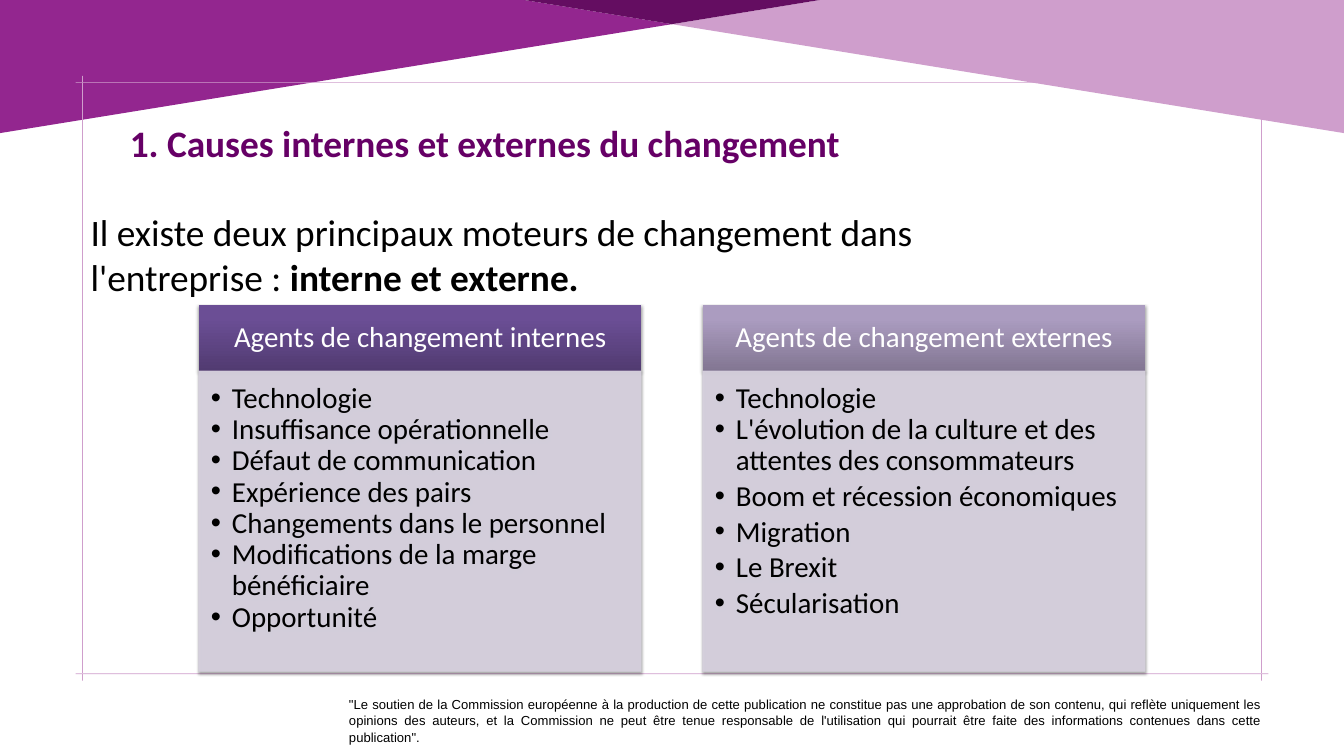
from lxml import etree
from pptx import Presentation
from pptx import util as u
from pptx.dml.color import RGBColor
from pptx.enum import shapes, text
from pptx.oxml import ns

Pt = u.Pt
ALIGN = text.PP_ALIGN
WIDTH, HEIGHT = 1440, 810


def colour(hex_code):
    return RGBColor.from_string(hex_code)


def set_all(target, values):
    for name, value in values.items():
        setattr(target, name, value)


def child(parent, tag, **attributes):
    return etree.SubElement(parent, ns.qn(tag), attributes)


def font_format(size, hex_code="000000", name="Calibri", bold=False):
    return {"size": Pt(size), "name": name, "bold": bold}, hex_code


def add_run(paragraph, wording, style):
    run = paragraph.add_run()
    run.text = wording
    values, hex_code = style
    set_all(run.font, values)
    run.font.color.rgb = colour(hex_code)


def set_frame(frame, insets=(7.2, 3.6, 7.2, 3.6), anchor=text.MSO_ANCHOR.TOP):
    sides = ("margin_left", "margin_top", "margin_right", "margin_bottom")
    set_all(frame, {side: Pt(inset) for side, inset in zip(sides, insets)})
    set_all(frame, {"word_wrap": True, "vertical_anchor": anchor})


def add_text(slide, box, runs, insets=(7.2, 3.6, 7.2, 3.6), **layout):
    frame = slide.shapes.add_textbox(*map(Pt, box)).text_frame
    set_frame(frame, insets)
    set_all(frame.paragraphs[0], layout)
    for wording, style in runs:
        add_run(frame.paragraphs[0], wording, style)


def add_outline(slide, contours, hex_code):
    builder = None
    for contour in contours:
        start, *rest = [(Pt(x), Pt(y)) for x, y in contour]
        if builder is None:
            builder = slide.shapes.build_freeform(*start)
        else:
            builder.move_to(*start)
        builder.add_line_segments(rest, close=True)
    outline = builder.convert_to_shape()
    outline.shadow.inherit = False
    outline.fill.solid()
    outline.fill.fore_color.rgb = colour(hex_code)
    outline.line.fill.background()


def add_banner(slide, box):
    """Two wedges from the top corners and the dark overlap between them."""
    left, top, width, height = box
    right, middle = left + width, left + width / 2
    inner_left, inner_right = middle - 158.4, middle + 158.4
    tip = (middle, top + 25.9)
    add_outline(slide, [[(left, top + height), (left, top), (inner_left, top), tip]], "93268F")
    add_outline(slide, [[(right, top + height), tip, (inner_right, top), (right, top)]], "CF9ECC")
    add_outline(slide, [[tip, (inner_left, top), (inner_right, top)]], "640D61")


def add_guides(slide, box, overhang=7, weight=0.7):
    """Thin border whose lines cross at the corners."""
    left, top, width, height = box
    right, bottom = left + width, top + height
    bars = [(left, y, right, y + weight)
            for y in (top + overhang, bottom - overhang - weight)]
    bars += [(x, top, x + weight, bottom)
             for x in (left + overhang, right - overhang - weight)]
    add_outline(slide, [[(x1, y1), (x2, y1), (x2, y2), (x1, y2)]
                        for x1, y1, x2, y2 in bars], "CF9ECC")


def add_panel(slide, box):
    """Rectangle with a soft shadow below."""
    panel = slide.shapes.add_shape(shapes.MSO_SHAPE.RECTANGLE, *map(Pt, box))
    panel.shadow.inherit = False
    effects = panel._element.spPr.find(ns.qn("a:effectLst"))
    shadow = child(effects, "a:outerShdw", blurRad=str(Pt(3.1)), dist=str(Pt(1.8)),
                   dir="5400000", rotWithShape="0")
    child(child(shadow, "a:srgbClr", val="000000"), "a:alpha", val="35000")
    return panel


def add_agents(slide, box, heading, shades, agents, header_height=70.6):
    """Gradient header over a bulleted list."""
    left, top, width, height = box

    header = add_panel(slide, (left, top, width, header_height))
    header.line.fill.background()
    header.fill.gradient()
    header.fill.gradient_angle = 90
    for stop, shade, position in zip(header.fill.gradient_stops, shades, (0, 0.8)):
        stop.color.rgb = colour(shade)
        stop.position = position
    set_frame(header.text_frame, (17.3, 10, 17.3, 10), text.MSO_ANCHOR.MIDDLE)
    title = header.text_frame.paragraphs[0]
    set_all(title, {"alignment": ALIGN.CENTER, "line_spacing": 0.9})
    add_run(title, heading, font_format(31, "FFFFFF"))

    body = add_panel(slide, (left, top + header_height, width, height - header_height))
    body.fill.solid()
    body.line.width = Pt(0.75)
    body.line.fill.solid()
    for paint in (body.fill, body.line.fill):
        paint.fore_color.rgb = colour("D7D1DF")
    for tint in list(body._element.spPr.iter(ns.qn("a:srgbClr"))):
        if tint.get("val") == "D7D1DF":
            child(tint, "a:alpha", val="90000")
    frame = body.text_frame
    set_frame(frame, (13, 13, 17.3, 19.4))
    for index, (agent, space) in enumerate(agents):
        item = frame.add_paragraph() if index else frame.paragraphs[0]
        properties = item._p.get_or_add_pPr()
        set_all_xml = {"marL": str(Pt(22.5)), "indent": str(-Pt(22.5))}
        properties.attrib.update(set_all_xml)
        child(child(properties, "a:buClr"), "a:srgbClr", val="000000")
        child(properties, "a:buFont", typeface="Arial")
        child(properties, "a:buChar", char="•")
        set_all(item, {"alignment": ALIGN.LEFT, "line_spacing": 0.9})
        if space:
            item.space_before = Pt(space)
        add_run(item, agent, font_format(31))


def main():
    deck = Presentation()
    set_all(deck, {"slide_width": Pt(WIDTH), "slide_height": Pt(HEIGHT)})
    slide = deck.slides.add_slide(deck.slide_layouts[6])

    # Background decoration
    add_banner(slide, (0, 0, WIDTH, 142.6))
    add_guides(slide, (81, 81.2, 1278, 648))

    # Funding notice
    notice = (
        '"Le soutien de la Commission européenne à la production de cette publication '
        "ne constitue pas une approbation de son contenu, qui reflète uniquement les "
        "opinions des auteurs, et la Commission ne peut être tenue responsable de "
        "l'utilisation qui pourrait être faite des informations contenues dans cette "
        'publication".')
    add_text(slide, (366, 741, 993, 37.4), [(notice, font_format(14, name="Arial"))],
             (7.9, 3.6, 7.2, 3.6), alignment=ALIGN.JUSTIFY, line_spacing=1.07)

    # Title and introduction
    add_text(slide, (132, 125.3, 954, 55.4),
             [("1. Causes internes et externes du changement",
               font_format(40, "660066", bold=True))])
    add_text(slide, (90, 220.3, 1038, 138),
             [("Il existe deux principaux moteurs de changement dans l'entreprise : ",
               font_format(40)),
              ("interne et externe.", font_format(40, bold=True))])

    # Internal and external agents; each item has its space before
    columns = [
        ("Agents de changement internes", ("513B71", "6B4E95"),
         [("Technologie", 0), ("Insuffisance opérationnelle", 0),
          ("Défaut de communication", 0), ("Expérience des pairs", 0),
          ("Changements dans le personnel", 0),
          ("Modifications de la marge bénéficiaire", 0), ("Opportunité", 0)]),
        ("Agents de changement externes", ("827692", "AB9CC0"),
         [("Technologie", 0),
          ("L'évolution de la culture et des attentes des consommateurs", 0),
          ("Boom et récession économiques", 4.7), ("Migration", 4.7),
          ("Le Brexit", 4.7), ("Sécularisation", 4.7)]),
    ]
    for index, column in enumerate(columns):
        add_agents(slide, (213 + 540 * index, 327, 474, 392.4), *column)

    deck.save("out.pptx")


if __name__ == "__main__":
    main()
